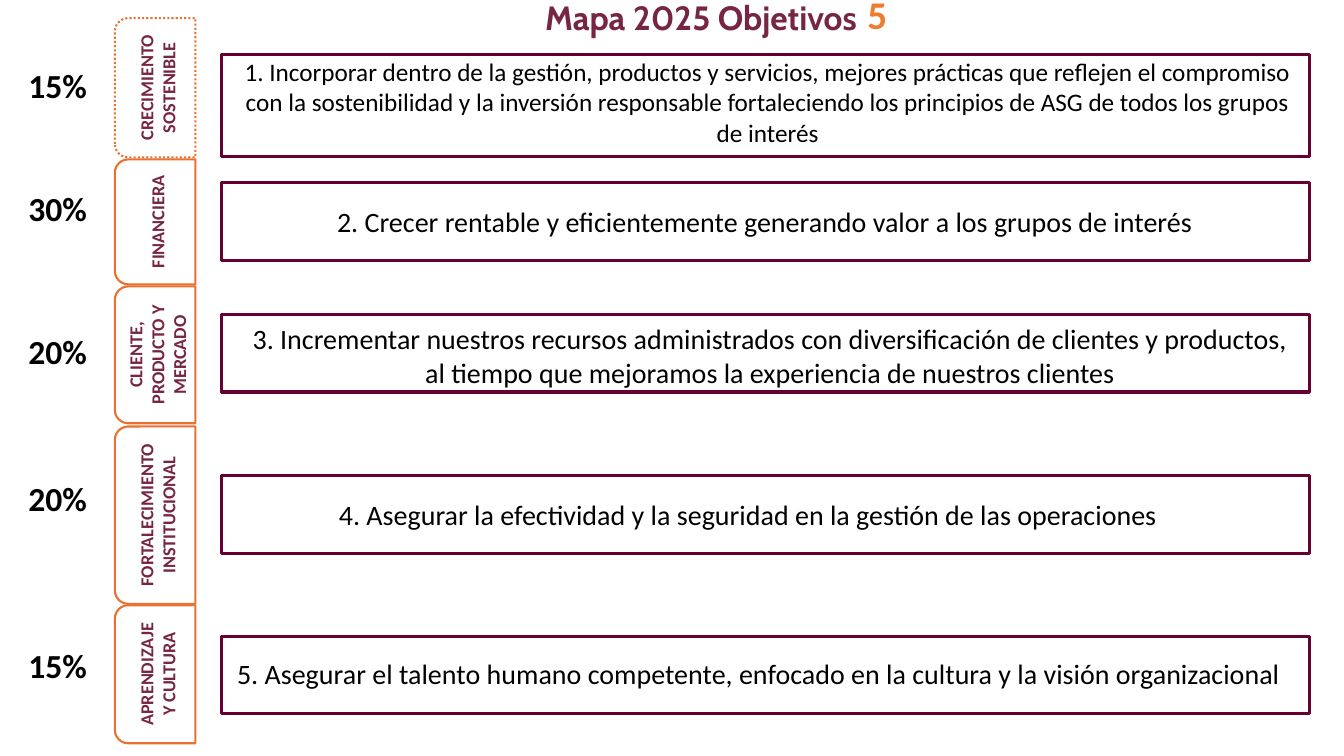
from dataclasses import dataclass

from pptx import Presentation
from pptx import util as u
from pptx.dml.color import RGBColor
from pptx.enum import dml, shapes, text


@dataclass(frozen=True)
class Theme:
    wine: str = "772544"
    plum: str = "660032"
    rust: str = "E97132"
    amber: str = "ED7D31"
    ink: str = "000000"
    head: str = "Cabin"
    body: str = "Calibri"
    label: int = 13
    small: int = 18
    goal: int = 20
    title: int = 24
    count: int = 28


class Board:
    def __init__(self, slide, theme):
        self.slide = slide
        self.theme = theme

    def put(self, shape, words, size, color, bold=False, font=None,
            middle=False, space=None):
        """Fill a shape with one centred, wrapped paragraph."""
        frame = shape.text_frame
        frame.word_wrap = True
        anchor = text.MSO_ANCHOR
        frame.vertical_anchor = anchor.MIDDLE if middle else anchor.TOP
        para = frame.paragraphs[0]
        para.alignment = text.PP_ALIGN.CENTER
        if space:
            para.line_spacing = space
        run = para.add_run()
        run.text = words
        run.font.name = font or self.theme.body
        run.font.size = u.Pt(size)
        run.font.bold = bold
        run.font.color.rgb = RGBColor.from_string(color)

    def label(self, box, words, size, color, **style):
        shape = self.slide.shapes.add_textbox(*map(u.Cm, box))
        self.put(shape, words, size, color, **style)

    def outline(self, kind, box, color, width):
        shape = self.slide.shapes.add_shape(kind, *map(u.Cm, box))
        shape.shadow.inherit = False
        shape.fill.background()
        shape.line.color.rgb = RGBColor.from_string(color)
        shape.line.width = u.Pt(width)
        return shape

    def tab(self, center, length, words, dotted):
        """Draw a sideways tab; center is its middle height on the slide."""
        mid, depth = 3.91, 2.03
        box = (mid - length / 2, center - depth / 2, length, depth)
        kind = shapes.MSO_SHAPE.ROUND_2_SAME_RECTANGLE
        shape = self.outline(kind, box, self.theme.rust, 1.5)
        shape.rotation = 270
        if dotted:
            shape.line.dash_style = dml.MSO_LINE.ROUND_DOT
        self.put(shape, words, self.theme.label, self.theme.wine,
                 bold=True, middle=True)

    def share(self, top, words):
        self.label((0, top, 2.9, 1.96), words, self.theme.title,
                   self.theme.ink, bold=True, middle=True, space=0.9)

    def goal(self, top, height, box, words, size):
        self.outline(shapes.MSO_SHAPE.RECTANGLE, (5.59, top, 27.41, height),
                     self.theme.plum, 2.25)
        self.label(box, words, size, self.theme.ink)


THEME = Theme()

# tab: center, length, name; share: top, value; goal: top, height, text box, words, size
ROWS = [
    ((2.21, 3.51, "CRECIMIENTO SOSTENIBLE"), (1.22, "15%"),
     (1.37, 2.57, (5.82, 1.3, 27.05, 2.57),
      "1. Incorporar dentro de la gestión, productos y servicios, mejores "
      "prácticas que reflejen el compromiso con la sostenibilidad y la "
      "inversión responsable fortaleciendo los principios de ASG de todos "
      "los grupos de interés", THEME.small)),
    ((5.59, 3.15, "FINANCIERA"), (4.32, "30%"),
     (4.6, 1.96, (7.11, 5.03, 24.33, 1.12),
      "2. Crecer rentable y eficientemente generando valor a los grupos "
      "de interés", THEME.goal)),
    ((8.94, 3.45, "CLIENTE, PRODUCTO Y MERCADO"), (7.92, "20%"),
     (7.92, 1.96, (6.07, 7.98, 26.67, 1.96),
      "3. Incrementar nuestros recursos administrados con diversificación "
      "de clientes y productos, al tiempo que mejoramos la experiencia de "
      "nuestros clientes", THEME.goal)),
    ((12.98, 4.47, "FORTALECIMIENTO INSTITUCIONAL"), (11.63, "20%"),
     (11.99, 1.96, (5.59, 12.42, 26.52, 1.12),
      "4. Asegurar la efectividad y la seguridad en la gestión de las "
      "operaciones", THEME.goal)),
    ((16.99, 3.48, "APRENDIZAJE Y CULTURA"), (15.85, "15%"),
     (16.03, 1.96, (5.26, 16.41, 27.71, 1.12),
      "5. Asegurar el talento humano competente, enfocado en la cultura y "
      "la visión organizacional", THEME.goal)),
]


def main():
    deck = Presentation()
    deck.slide_width, deck.slide_height = u.Cm(33.87), u.Cm(19.05)
    board = Board(deck.slides.add_slide(deck.slide_layouts[6]), THEME)
    board.label((9.5, -0.15, 16.33, 1.3), "Mapa 2025 Objetivos", THEME.title,
                THEME.wine, bold=True, font=THEME.head, middle=True, space=0.9)
    board.label((20.98, -0.36, 2.26, 1.45), "5", THEME.count, THEME.amber,
                bold=True)
    for row, (tab, share, goal) in enumerate(ROWS):
        board.tab(*tab, dotted=row == 0)
        board.share(*share)
        board.goal(*goal)
    deck.save("out.pptx")


if __name__ == "__main__":
    main()
